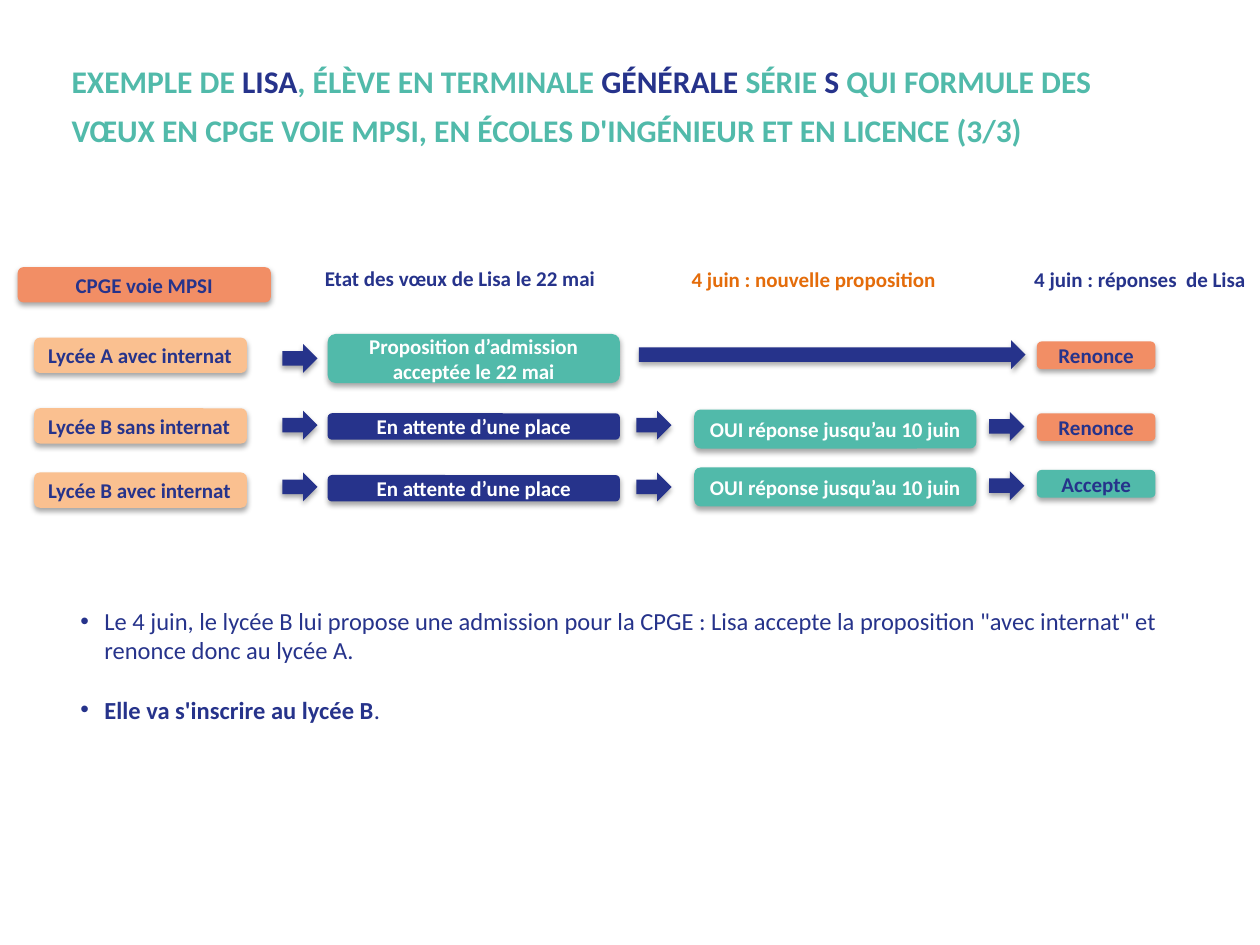
from lxml import etree
from pptx import Presentation
from pptx.dml.color import RGBColor
from pptx.enum.shapes import MSO_SHAPE as SHAPE
from pptx.enum.text import MSO_ANCHOR as ANCHOR, PP_ALIGN as ALIGN
from pptx.oxml import parse_xml
from pptx.oxml.ns import nsdecls, qn
from pptx.util import Inches, Pt

NAVY, TEAL, CORAL = "26338B", "51BAAA", "F28E65"
PEACH, ORANGE, WHITE = "FAC090", "E46C0A", "FFFFFF"


def rgb(value):
    return RGBColor.from_string(value)


class Deck:
    font = "Calibri"
    indent = Inches(0.19)

    def __init__(self, width, height):
        self.prs = Presentation()
        self.prs.slide_width, self.prs.slide_height = Inches(width), Inches(height)
        self.s = self.prs.slides.add_slide(self.prs.slide_layouts[6])

    def style(self, r, size, color, bold=True):
        f = r.font
        f.name, f.size, f.bold = self.font, Pt(size), bold
        f.color.rgb = rgb(color)

    def shape(self, kind, x, y, w, h, fill):
        sp = self.s.shapes.add_shape(kind, *map(Inches, (x, y, w, h)))
        sp.fill.solid()
        sp.fill.fore_color.rgb = rgb(fill)
        sp.line.fill.background()
        sp.shadow.inherit = False
        sp._element.spPr.find(qn("a:effectLst")).append(parse_xml(
            f'<a:outerShdw {nsdecls("a")} blurRad="{Pt(3.1)}" dist="{Pt(1.8)}" '
            'dir="5400000" rotWithShape="0"><a:srgbClr val="000000">'
            '<a:alpha val="35000"/></a:srgbClr></a:outerShdw>'))
        return sp

    def arrow(self, x, y, w=0.28):
        self.shape(SHAPE.RIGHT_ARROW, x, y, w, 0.23, NAVY)

    def box(self, text, x, y, w, h, fill, color, align=ALIGN.CENTER):
        tf = self.shape(SHAPE.ROUNDED_RECTANGLE, x, y, w, h, fill).text_frame
        tf.word_wrap = True
        tf.vertical_anchor = ANCHOR.MIDDLE
        tf.text = text
        p = tf.paragraphs[0]
        p.alignment = align
        self.style(p.runs[0], 12, color)

    def text_frame(self, x, y, w, h):
        tf = self.s.shapes.add_textbox(*map(Inches, (x, y, w, h))).text_frame
        tf.word_wrap = True
        return tf

    def label(self, text, x, y, w, color):
        tf = self.text_frame(x, y, w, 0.3)
        tf.text = text
        self.style(tf.paragraphs[0].runs[0], 12, color)

    def title(self, parts, x, y, w, h):
        tf = self.text_frame(x, y, w, h)
        tf.vertical_anchor = ANCHOR.MIDDLE
        p = tf.paragraphs[0]
        p.line_spacing = Pt(28)
        for text, color in parts:
            r = p.add_run()
            r.text = text
            self.style(r, 18, color)

    def bullets(self, items, x, y, w, h, gap):
        tf = self.text_frame(x, y, w, h)
        for i, parts in enumerate(items):
            p = tf.add_paragraph() if i else tf.paragraphs[0]
            pPr = p._p.get_or_add_pPr()
            pPr.set("marL", str(self.indent))
            pPr.set("indent", str(-self.indent))
            etree.SubElement(pPr, qn("a:buFont")).set("typeface", "Arial")
            etree.SubElement(pPr, qn("a:buChar")).set("char", "•")
            if i:
                p.space_before = Pt(gap)
            for text, bold in parts:
                r = p.add_run()
                r.text = text
                self.style(r, 14, NAVY, bold)


def main():
    d = Deck(10, 7.5)

    # Title
    d.title([("EXEMPLE DE ", TEAL), ("LISA", NAVY),
             (", ÉLÈVE EN TERMINALE ", TEAL), ("GÉNÉRALE", NAVY),
             (" SÉRIE ", TEAL), ("S", NAVY),
             (" QUI FORMULE DES VŒUX EN CPGE VOIE MPSI, EN ÉCOLES "
              "D'INGÉNIEUR ET EN LICENCE (3/3)", TEAL)], 0.47, 0.09, 8.62, 1.41)

    # Column headings
    d.box("CPGE voie MPSI", 0.14, 2.12, 2.01, 0.28, CORAL, NAVY)
    d.label("Etat des vœux de Lisa le 22 mai", 2.48, 2.06, 3.27, NAVY)
    d.label("4 juin : nouvelle proposition", 5.39, 2.07, 2.28, ORANGE)
    d.label("4 juin : réponses  de Lisa", 8.11, 2.07, 1.89, NAVY)

    # Wishes, each with an arrow to its state
    for text, y, arrow_y in [("Lycée A avec internat", 2.68, 2.73),
                             ("Lycée B sans internat", 3.24, 3.26),
                             ("Lycée B avec internat", 3.75, 3.75)]:
        d.box(text, 0.27, y, 1.69, 0.28, PEACH, NAVY, ALIGN.LEFT)
        d.arrow(2.24, arrow_y)

    # Lycée A: accepted on 22 May, straight on to the answer
    d.box("Proposition d’admission acceptée le 22 mai",
          2.6, 2.65, 2.32, 0.39, TEAL, WHITE)
    d.arrow(5.07, 2.7, 3.07)

    # Lycée B: waiting, then a new proposal
    for wait_y, arrow_y, offer_y, answer_y in [(3.28, 3.26, 3.25, 3.27),
                                               (3.77, 3.75, 3.71, 3.74)]:
        d.box("En attente d’une place", 2.6, wait_y, 2.32, 0.21, NAVY, WHITE)
        d.arrow(5.05, arrow_y)
        d.box("OUI réponse jusqu’au 10 juin", 5.51, offer_y, 2.24, 0.31, TEAL, WHITE)
        d.arrow(7.85, answer_y)

    # Answers
    for text, y, fill in [("Renonce", 2.71, CORAL), ("Renonce", 3.28, CORAL),
                          ("Accepte", 3.73, TEAL)]:
        d.box(text, 8.23, y, 0.94, 0.22, fill, NAVY)

    # Conclusion
    d.bullets([[("Le 4 juin, le lycée B lui propose une admission pour la CPGE : "
                 "Lisa accepte la proposition \"avec internat\" et renonce donc "
                 "au lycée A.", False)],
               [("Elle va s'inscrire au lycée B", True), (".", False)]],
              0.54, 4.76, 9.09, 1.28, gap=17)

    d.prs.save("out.pptx")


if __name__ == "__main__":
    main()
